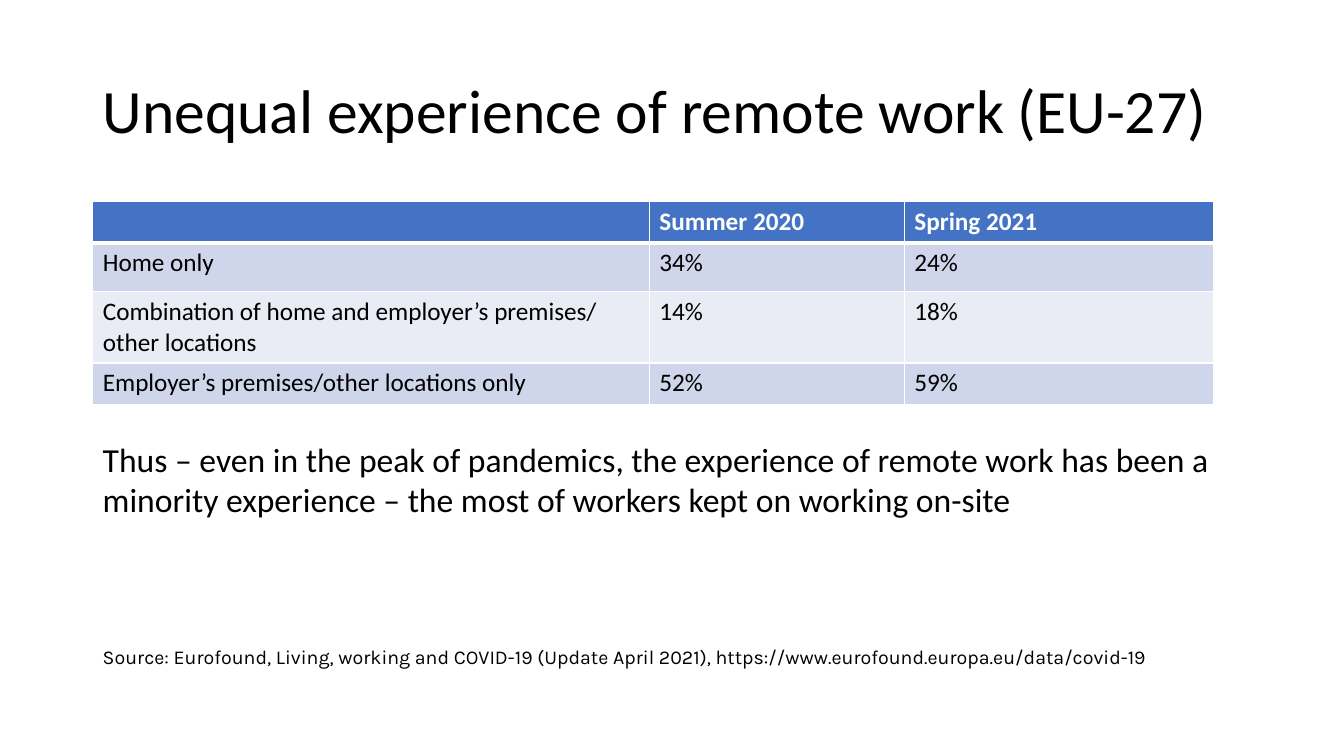
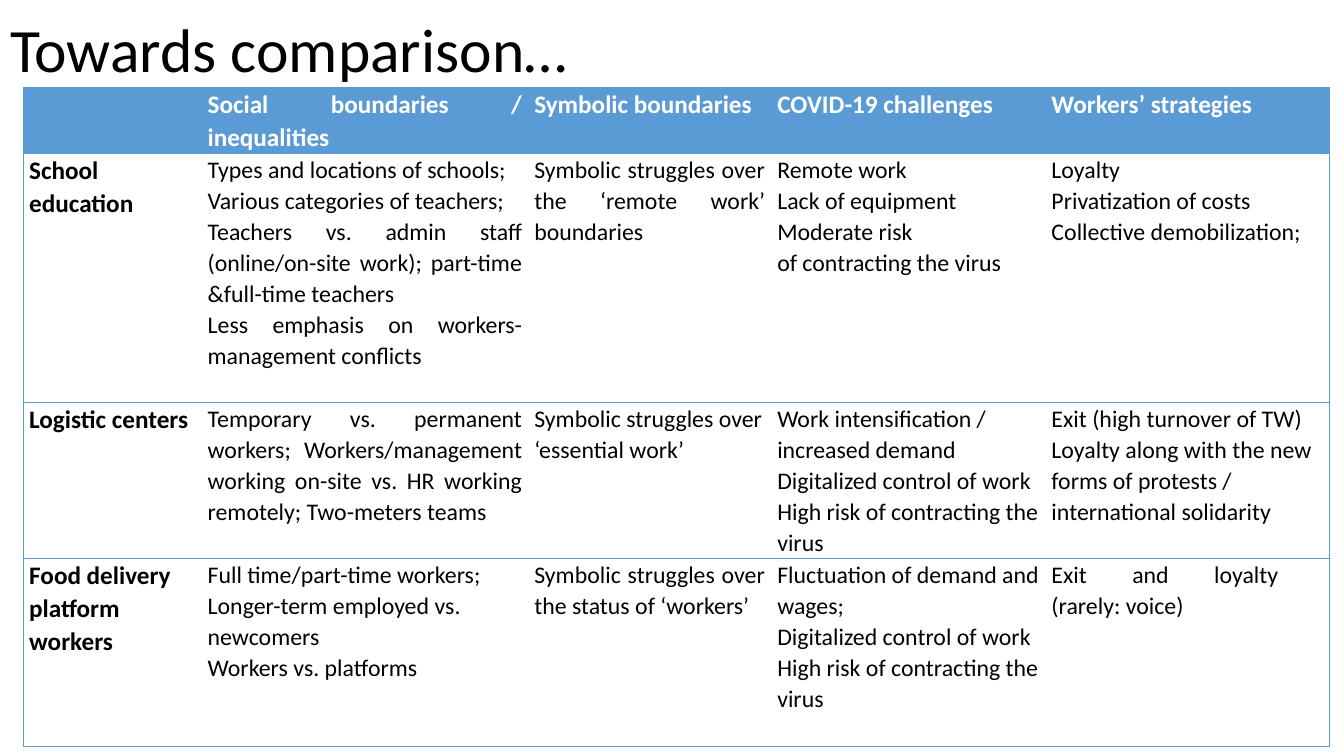
from lxml import etree
from pptx import Presentation
from pptx.dml.color import RGBColor
from pptx.enum import text
from pptx.oxml import ns
from pptx.util import Inches, Pt

BLACK = RGBColor(0x00, 0x00, 0x00)
WHITE = RGBColor(0xFF, 0xFF, 0xFF)
HEADER_BLUE = RGBColor(0x44, 0x72, 0xC4)
BANDS = (RGBColor(0xCF, 0xD5, 0xEA), RGBColor(0xE9, 0xEB, 0xF5))
SKY_BLUE = RGBColor(0x5B, 0x9B, 0xD5)

FONT = "Calibri"
SOURCE_FONT = "Karla"
LEFT = 0.92
TITLE_SIZE = (11.5, 1.45)

REMOTE_WORK = [
    ["", "Summer 2020", "Spring 2021"],
    ["Home only", "34%", "24%"],
    ["Combination of home and employer’s premises/ other locations", "14%", "18%"],
    ["Employer’s premises/other locations only", "52%", "59%"],
]

# Each cell is a list of paragraphs; \n is a line break within one.
COMPARISON = [
    [[], ["Social boundaries / inequalities"], ["Symbolic boundaries"],
     ["COVID-19 challenges"], ["Workers’ strategies"]],
    [["School education"],
     ["Types and locations of schools;",
      "Various categories of teachers;",
      "Teachers vs. admin staff (online/on-site work); part-time &full-time teachers",
      "Less emphasis on workers-management conflicts"],
     ["Symbolic struggles over the ‘remote work’ boundaries"],
     ["Remote work", "Lack of equipment", "Moderate risk\nof contracting the virus"],
     ["Loyalty", "Privatization of costs", "Collective demobilization;"]],
    [["Logistic centers"],
     ["Temporary vs. permanent workers; Workers/management working on-site "
      "vs. HR working remotely; Two-meters teams"],
     ["Symbolic struggles over ‘essential work’"],
     ["Work intensification / increased demand",
      "Digitalized control of work",
      "High risk of contracting the virus"],
     ["Exit (high turnover of TW)",
      "Loyalty along with the new forms of protests / international solidarity"]],
    [["Food delivery platform workers"],
     ["Full time/part-time workers;",
      "Longer-term employed vs. newcomers",
      "Workers vs. platforms"],
     ["Symbolic struggles over the status of ‘workers’"],
     ["Fluctuation of demand and wages;",
      "Digitalized control of work",
      "High risk of contracting the virus"],
     ["Exit and loyalty \n(rarely: voice)"]],
]
JUSTIFIED = {(0, 1), (1, 1), (1, 2), (2, 1), (3, 2), (3, 4)}


def write(frame, paragraphs, size, color=BLACK, bold=False, font=FONT,
          align=text.PP_ALIGN.LEFT, spacing=1.0):
    for index, wording in enumerate(paragraphs):
        paragraph = frame.add_paragraph() if index else frame.paragraphs[0]
        paragraph.alignment = align
        paragraph.line_spacing = spacing
        for part, line in enumerate(wording.split("\n")):
            if part:
                paragraph.add_line_break()
            run = paragraph.add_run()
            run.text = line
            run.font.name = font
            run.font.size = Pt(size)
            run.font.bold = bold
            run.font.color.rgb = color


def add_titled_slide(deck, wording, left, top):
    slide = deck.slides.add_slide(deck.slide_layouts.get_by_name("Title Only"))
    title = slide.shapes.title
    title.left, title.top = Inches(left), Inches(top)
    title.width, title.height = map(Inches, TITLE_SIZE)
    frame = title.text_frame
    frame.auto_size = text.MSO_AUTO_SIZE.NONE
    frame.vertical_anchor = text.MSO_ANCHOR.MIDDLE
    write(frame, [wording], 44, spacing=0.9)
    return slide


def add_text(slide, wording, top, width, height, size, font=FONT):
    box = slide.shapes.add_textbox(Inches(LEFT), Inches(top), Inches(width), Inches(height))
    box.text_frame.word_wrap = True
    write(box.text_frame, [wording], size, font=font)


def add_grid(slide, left, top, widths, heights):
    frame = slide.shapes.add_table(len(heights), len(widths), Inches(left), Inches(top),
                                   Inches(sum(widths)), Inches(sum(heights)))
    grid = frame.table
    for column, width in zip(grid.columns, widths):
        column.width = Inches(width)
    for row, height in zip(grid.rows, heights):
        row.height = Inches(height)
    return grid


def set_borders(cell, color, **points):
    """Draw the sides given as L, R, T or B in points and clear the others."""
    properties = cell._tc.get_or_add_tcPr()
    for index, side in enumerate("LRTB"):
        line = etree.Element(ns.qn(f"a:ln{side}"))
        if side in points:
            line.set("w", str(Pt(points[side])))
            fill = etree.SubElement(line, ns.qn("a:solidFill"))
            etree.SubElement(fill, ns.qn("a:srgbClr")).set("val", str(color))
        else:
            etree.SubElement(line, ns.qn("a:noFill"))
        properties.insert(index, line)


def fill_cell(cell, color):
    cell.fill.solid()
    cell.fill.fore_color.rgb = color


def add_remote_work_table(slide):
    grid = add_grid(slide, LEFT, 2, [5.52, 2.53, 3.07], [0.41, 0.48, 0.7, 0.41])
    for r, row in enumerate(REMOTE_WORK):
        header = r == 0
        for c, wording in enumerate(row):
            cell = grid.cell(r, c)
            fill_cell(cell, HEADER_BLUE if header else BANDS[(r - 1) % 2])
            set_borders(cell, WHITE, L=1, R=1, T=3 if r == 1 else 1, B=3 if header else 1)
            if wording:
                write(cell.text_frame, [wording], 18, WHITE if header else BLACK, header)


def add_comparison_table(slide):
    grid = add_grid(slide, 0.23, 0.87, [1.77, 3.24, 2.41, 2.72, 2.82],
                    [0.65, 2.47, 1.55, 1.86])
    for r, row in enumerate(COMPARISON):
        header = r == 0
        for c, paragraphs in enumerate(row):
            cell = grid.cell(r, c)
            cell.margin_left = cell.margin_right = Inches(0.06)
            cell.margin_top = cell.margin_bottom = 0
            fill_cell(cell, SKY_BLUE if header else WHITE)
            sides = {"T": 0.5, "B": 0.5}
            if c == 0:
                sides["L"] = 0.5
            if c == len(row) - 1:
                sides["R"] = 0.5
            set_borders(cell, SKY_BLUE, **sides)
            heading = header or c == 0
            justified = (r, c) in JUSTIFIED
            write(cell.text_frame, paragraphs, 18 if heading else 17,
                  WHITE if header else BLACK, heading, spacing=1.07,
                  align=text.PP_ALIGN.JUSTIFY if justified else text.PP_ALIGN.LEFT)


def main():
    deck = Presentation()
    deck.slide_width, deck.slide_height = Inches(13.33), Inches(7.5)

    experience = add_titled_slide(deck, "Unequal experience of remote work (EU-27)", LEFT, 0.4)
    add_remote_work_table(experience)
    add_text(experience, "Source: Eurofound, Living, working and COVID-19 (Update April 2021), "
             "https://www.eurofound.europa.eu/data/covid-19", 6.35, 10.69, 0.34, 14, SOURCE_FONT)
    add_text(experience, "Thus – even in the peak of pandemics, the experience of remote work "
             "has been a minority experience – the most of workers kept on working on-site",
             4.3, 11.21, 0.91, 24)

    comparison = add_titled_slide(deck, "Towards comparison…", 0, -0.2)
    add_comparison_table(comparison)

    deck.save("out.pptx")


if __name__ == "__main__":
    main()
